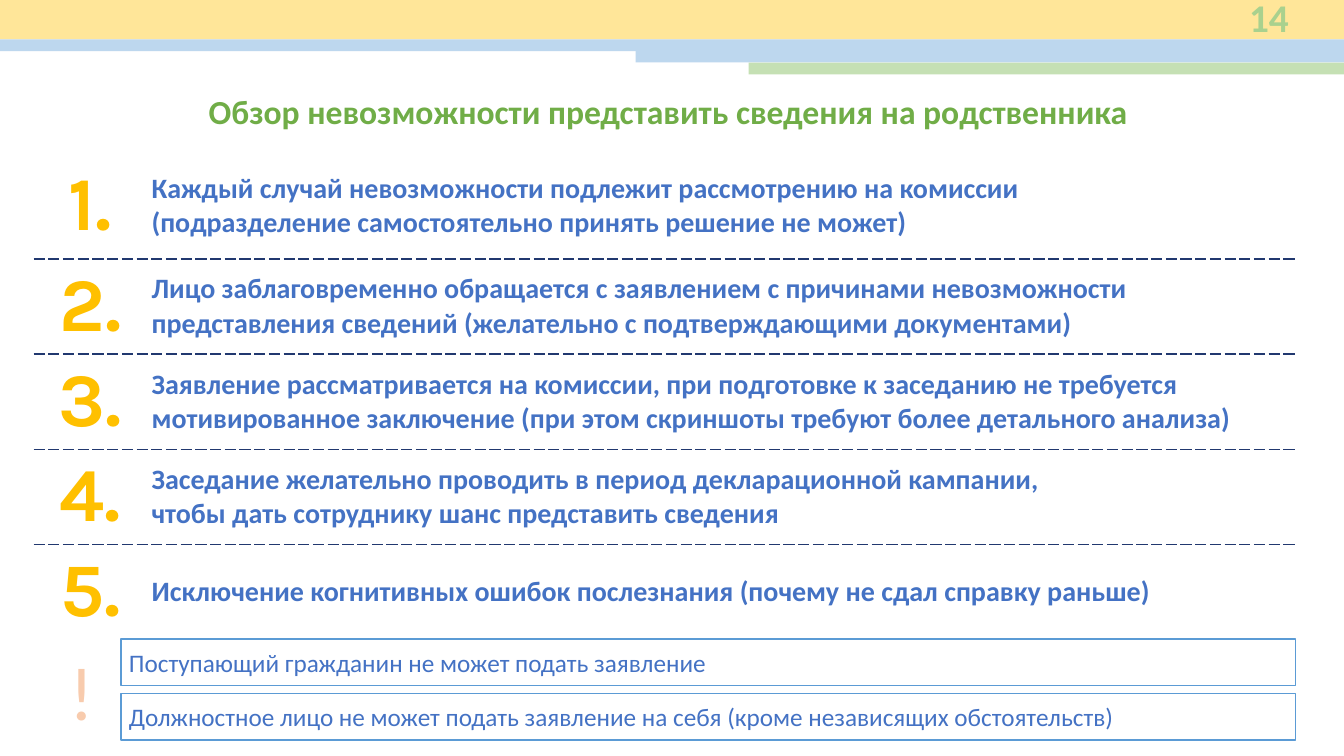
from dataclasses import dataclass

from lxml.etree import SubElement
from pptx import Presentation
from pptx.dml.color import RGBColor
from pptx.enum.shapes import MSO_SHAPE
from pptx.enum.text import MSO_ANCHOR, MSO_AUTO_SIZE, PP_ALIGN
from pptx.oxml.ns import qn
from pptx.util import Inches, Pt

WIDTH, HEIGHT = Inches(13.33), Inches(7.5)
BLUE = "4472C4"
DASH = "21386F"
MARGIN = 2.5
NUMBER_COLUMN, TEXT_COLUMN = 8.48, 85.45
TABLE_TOP, FIRST_ROW, NEXT_ROW = 20.13, 14.13, 12.58
NOTE_TOP, NOTE_STEP = 84.55, 7.2


@dataclass(frozen=True)
class Area:
    """A rectangle in percent of the slide's width and height."""
    left: float
    top: float
    width: float
    height: float

    def emu(self) -> tuple[int, int, int, int]:
        """Return left, top, width and height in slide units."""
        return (across(self.left), down(self.top),
                across(self.width), down(self.height))


@dataclass(frozen=True)
class Band:
    """A coloured strip of the header that reaches the right edge."""
    left: float
    top: float
    height: float
    fill: str


@dataclass(frozen=True)
class Style:
    """The look of a paragraph."""
    size: float
    color: str
    bold: bool = True
    name: str = "Calibri"
    alignment: PP_ALIGN = PP_ALIGN.LEFT


BANDS = [
    Band(0, 0, 5.2, "FFE699"),
    Band(0, 5.2, 1.57, "BDD7EE"),
    Band(47.3, 6.7, 1.57, "BDD7EE"),
    Band(55.7, 8.27, 1.57, "C5E0B4"),
]
POINTS = [
    ("Каждый случай невозможности подлежит рассмотрению на комиссии ",
     "(подразделение самостоятельно принять решение не может)"),
    ("Лицо заблаговременно обращается с заявлением с причинами невозможности "
     "представления сведений (желательно с подтверждающими документами)",),
    ("Заявление рассматривается на комиссии, при подготовке к заседанию не требуется "
     "мотивированное заключение (при этом скриншоты требуют более детального анализа)",),
    ("Заседание желательно проводить в период декларационной кампании, ",
     "чтобы дать сотруднику шанс представить сведения"),
    ("Исключение когнитивных ошибок послезнания (почему не сдал справку раньше)",),
]
NOTES = [
    "Поступающий гражданин не может подать заявление",
    "Должностное лицо не может подать заявление на себя (кроме независящих обстоятельств)",
]
NUMBER_STYLE = Style(54, "FFC000", name="Karla", alignment=PP_ALIGN.CENTER)
POINT_STYLE = Style(20, BLUE)
NOTE_STYLE = Style(18, BLUE, bold=False)


def across(share: float) -> int:
    """Turn a percentage of the slide's width into units."""
    return round(WIDTH * share / 100)


def down(share: float) -> int:
    """Turn a percentage of the slide's height into units."""
    return round(HEIGHT * share / 100)


def color(value: str) -> RGBColor:
    """Make a colour from a hex string."""
    return RGBColor.from_string(value)


def apply(target, values: dict) -> None:
    """Set every named attribute on the target."""
    for name, value in values.items():
        setattr(target, name, value)


def write(frame, lines: tuple[str, ...], style: Style) -> None:
    """Write lines as one formatted paragraph."""
    para = frame.paragraphs[0]
    para.alignment = style.alignment
    for index, line in enumerate(lines):
        if index:
            para.add_line_break()
        span = para.add_run()
        span.text = line
        apply(span.font, {"size": Pt(style.size), "bold": style.bold, "name": style.name})
        span.font.color.rgb = color(style.color)


def add_box(page, area: Area):
    """Add a plain rectangle without fill, line or shadow."""
    box = page.shapes.add_shape(MSO_SHAPE.RECTANGLE, *area.emu())
    box.shadow.inherit = False
    box.fill.background()
    box.line.fill.background()
    return box


def add_band(page, band: Band) -> None:
    """Draw one header strip."""
    box = add_box(page, Area(band.left, band.top, 100 - band.left, band.height))
    box.fill.solid()
    box.fill.fore_color.rgb = color(band.fill)


def add_note(page, text: str, top: float) -> None:
    """Draw one outlined note."""
    box = add_box(page, Area(9, top, 87.4, 6.13))
    box.line.color.rgb = color("5B9BD5")
    box.line.width = Pt(1)
    sides = ("margin_left", "margin_top", "margin_right", "margin_bottom")
    apply(box.text_frame, dict.fromkeys(sides, Inches(0.08)))
    apply(box.text_frame, {"word_wrap": True, "vertical_anchor": MSO_ANCHOR.MIDDLE})
    write(box.text_frame, (text,), NOTE_STYLE)


def add_label(page, text: str, area: Area, style: Style) -> None:
    """Add a vertically centred text box."""
    box = page.shapes.add_textbox(*area.emu())
    apply(box.text_frame, {"word_wrap": True, "vertical_anchor": MSO_ANCHOR.MIDDLE})
    write(box.text_frame, (text,), style)


def add_title(page, text: str) -> None:
    """Place and format the title placeholder."""
    title = page.shapes.title
    apply(title, dict(zip(("left", "top", "width", "height"),
                          Area(4.5, 11.33, 91, 6.67).emu())))
    apply(title.text_frame, {"word_wrap": True, "auto_size": MSO_AUTO_SIZE.NONE,
                             "vertical_anchor": MSO_ANCHOR.TOP})
    write(title.text_frame, (text,), Style(24, "70AD47", alignment=PP_ALIGN.CENTER))


def set_borders(cell, above: bool, below: bool) -> None:
    """Give a cell dashed rules above and below, and none at its sides."""
    properties = cell._tc.get_or_add_tcPr()
    sides = {"a:lnL": False, "a:lnR": False, "a:lnT": above, "a:lnB": below}
    for side, ruled in sides.items():
        line = SubElement(properties, qn(side), w=str(Pt(1)))
        if ruled:
            fill = SubElement(line, qn("a:solidFill"))
            SubElement(fill, qn("a:srgbClr"), val=DASH)
            SubElement(line, qn("a:prstDash"), val="dash")
        else:
            SubElement(line, qn("a:noFill"))


def add_points(page) -> None:
    """Draw the numbered points as a table."""
    last = len(POINTS) - 1
    area = Area(MARGIN, TABLE_TOP, NUMBER_COLUMN + TEXT_COLUMN, FIRST_ROW + last * NEXT_ROW)
    table = page.shapes.add_table(len(POINTS), 2, *area.emu()).table
    apply(table, {"first_row": False, "horz_banding": False})
    for column, share in zip(table.columns, (NUMBER_COLUMN, TEXT_COLUMN)):
        column.width = across(share)
    for index, lines in enumerate(POINTS):
        table.rows[index].height = down(NEXT_ROW if index else FIRST_ROW)
        contents = (((f"{index + 1}.",), NUMBER_STYLE), (lines, POINT_STYLE))
        for cell, (words, style) in zip(table.rows[index].cells, contents):
            apply(cell, {"margin_left": Inches(0.04), "margin_right": Inches(0.04),
                         "margin_top": Inches(0.02), "margin_bottom": Inches(0.02),
                         "vertical_anchor": MSO_ANCHOR.MIDDLE})
            set_borders(cell, index > 0, index < last)
            cell.fill.background()
            write(cell.text_frame, words, style)


def main() -> None:
    """Build and save the slide."""
    deck = Presentation()
    apply(deck, {"slide_width": WIDTH, "slide_height": HEIGHT})
    page = deck.slides.add_slide(deck.slide_layouts.get_by_name("Title Only"))
    for band in BANDS:
        add_band(page, band)
    add_label(page, "14", Area(87.25, -0.67, 9.38, 5.87),
              Style(28, "A9D18E", alignment=PP_ALIGN.RIGHT))
    add_title(page, "Обзор невозможности представить сведения на родственника ")
    add_points(page)
    for index, note in enumerate(NOTES):
        add_note(page, note, NOTE_TOP + index * NOTE_STEP)
    add_label(page, "!", Area(0.3, 74.93, 11.55, 32.67),
              Style(54, "F8CBAD", bold=False, alignment=PP_ALIGN.CENTER))
    deck.save("out.pptx")


if __name__ == "__main__":
    main()
